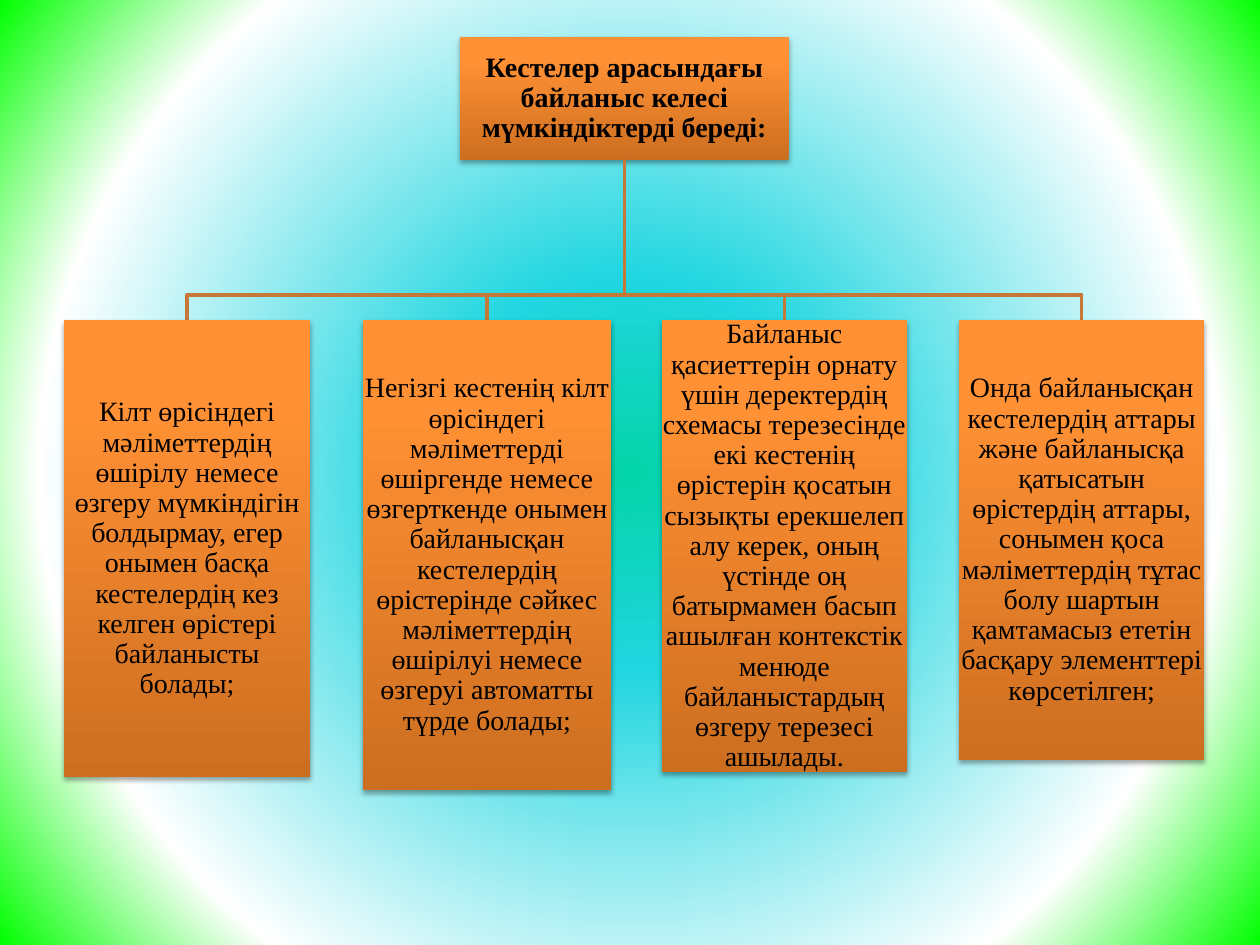
from lxml.etree import SubElement
from pptx import Presentation
from pptx.dml.color import RGBColor
from pptx.enum.shapes import MSO_SHAPE as Shape
from pptx.enum.text import MSO_ANCHOR as Anchor, MSO_AUTO_SIZE as AutoSize, PP_ALIGN as Align
from pptx.oxml.ns import qn
from pptx.util import Inches, Pt

COLORS = {"text": "000000", "line": "C67838", "shadow": "000000"}
BOX_STOPS = [(0, "CC6E20"), (80, "FF9034"), (100, "FF9136")]
PAGE_STOPS = [(0, "03D4A8"), (25, "21D6E0"), (75, "FFFFFF"), (100, "00FF00")]

HEADING = "Кестелер арасындағы байланыс келесі мүмкіндіктерді береді:"
HEADING_BOX = (3.65, 0.29, 2.61, 0.98)
BRANCH_TOP = 2.54
BAR_Y = 2.34
# left, width, height, text
BRANCHES = [
    (0.51, 1.95, 3.63,
     "Кілт өрісіндегі мәліметтердің өшірілу немесе өзгеру мүмкіндігін болдырмау, "
     "егер онымен басқа кестелердің кез келген өрістері байланысты болады;"),
    (2.88, 1.97, 3.73,
     "Негізгі кестенің кілт өрісіндегі мәліметтерді өшіргенде немесе өзгерткенде "
     "онымен байланысқан кестелердің өрістерінде сәйкес мәліметтердің өшірілуі "
     "немесе өзгеруі автоматты түрде болады;"),
    (5.25, 1.95, 3.59,
     "Байланыс қасиеттерін орнату үшін деректердің схемасы терезесінде екі кестенің "
     "өрістерін қосатын сызықты ерекшелеп алу керек, оның үстінде оң батырмамен "
     "басып ашылған контекстік менюде байланыстардың өзгеру терезесі ашылады."),
    (7.61, 1.95, 3.49,
     "Онда байланысқан кестелердің аттары және байланысқа қатысатын өрістердің "
     "аттары, сонымен қоса мәліметтердің тұтас болу шартын қамтамасыз ететін "
     "басқару элементтері көрсетілген;"),
]


def set_gradient(fill, element, stops, angle=None):
    """Fill with the stops: linear at an angle, or circular from the centre."""
    fill.gradient()
    gradient = element.find(".//" + qn("a:gradFill"))
    for child in list(gradient):
        gradient.remove(child)
    stop_list = SubElement(gradient, qn("a:gsLst"))
    for position, color in stops:
        stop = SubElement(stop_list, qn("a:gs"), pos=str(position * 1000))
        SubElement(stop, qn("a:srgbClr"), val=color)
    if angle is not None:
        SubElement(gradient, qn("a:lin"), ang=str(angle * 60000), scaled="0")
    else:
        circle = SubElement(gradient, qn("a:path"), path="circle")
        SubElement(circle, qn("a:fillToRect"), l="50000", t="50000", r="50000", b="50000")


def add_shadow(box):
    box.shadow.inherit = False
    effects = box.element.find(".//" + qn("a:effectLst"))
    shadow = SubElement(effects, qn("a:outerShdw"), blurRad=str(Pt(3.1)), dist=str(Pt(1.8)),
                        dir=str(90 * 60000), rotWithShape="0")
    color = SubElement(shadow, qn("a:srgbClr"), val=COLORS["shadow"])
    SubElement(color, qn("a:alpha"), val="35000")


def write_text(frame, text, size=16, bold=False, font="Times New Roman", color="text"):
    frame.word_wrap = True
    frame.auto_size = AutoSize.NONE
    frame.vertical_anchor = Anchor.MIDDLE
    frame.margin_left = frame.margin_right = Inches(0.01)
    frame.margin_top = frame.margin_bottom = Inches(0.01)
    para = frame.paragraphs[0]
    para.alignment = Align.CENTER
    para.line_spacing = 0.9
    span = para.add_run()
    span.text = text
    span.font.name = font
    span.font.size = Pt(size)
    span.font.bold = bold
    span.font.color.rgb = RGBColor.from_string(COLORS[color])


class Chart:
    """The style and the current slide of a hierarchy chart."""

    def __init__(self, page, line_width=2):
        self.page = page
        self.line_width = Pt(line_width)

    def background(self, stops):
        set_gradient(self.page.background.fill, self.page.element, stops)

    def style_box(self, box, text, bold=False):
        set_gradient(box.fill, box.element, BOX_STOPS, angle=270)
        box.line.fill.background()
        add_shadow(box)
        write_text(box.text_frame, text, bold=bold)

    def heading(self, text, left, top, width, height):
        box = self.page.shapes.title
        box.left, box.top = Inches(left), Inches(top)
        box.width, box.height = Inches(width), Inches(height)
        self.style_box(box, text, bold=True)

    def branch(self, text, left, top, width, height):
        box = self.page.shapes.add_shape(
            Shape.RECTANGLE, Inches(left), Inches(top), Inches(width), Inches(height))
        self.style_box(box, text)

    def elbow(self, points):
        start, *rest = [(Inches(x), Inches(y)) for x, y in points]
        builder = self.page.shapes.build_freeform(*start)
        builder.add_line_segments(rest, close=False)
        line = builder.convert_to_shape()
        line.fill.background()
        line.line.color.rgb = RGBColor.from_string(COLORS["line"])
        line.line.width = self.line_width
        line.shadow.inherit = False


def main():
    deck = Presentation()
    deck.slide_width, deck.slide_height = Inches(10), Inches(7.5)
    chart = Chart(deck.slides.add_slide(deck.slide_layouts[5]))
    chart.background(PAGE_STOPS)
    chart.heading(HEADING, *HEADING_BOX)

    left, top, width, height = HEADING_BOX
    trunk_x, trunk_y = left + width / 2, top + height
    for left, width, _, _ in reversed(BRANCHES):
        center = left + width / 2
        chart.elbow([(trunk_x, trunk_y), (trunk_x, BAR_Y), (center, BAR_Y), (center, BRANCH_TOP)])
    for left, width, height, text in BRANCHES:
        chart.branch(text, left, BRANCH_TOP, width, height)

    deck.save("out.pptx")


if __name__ == "__main__":
    main()
